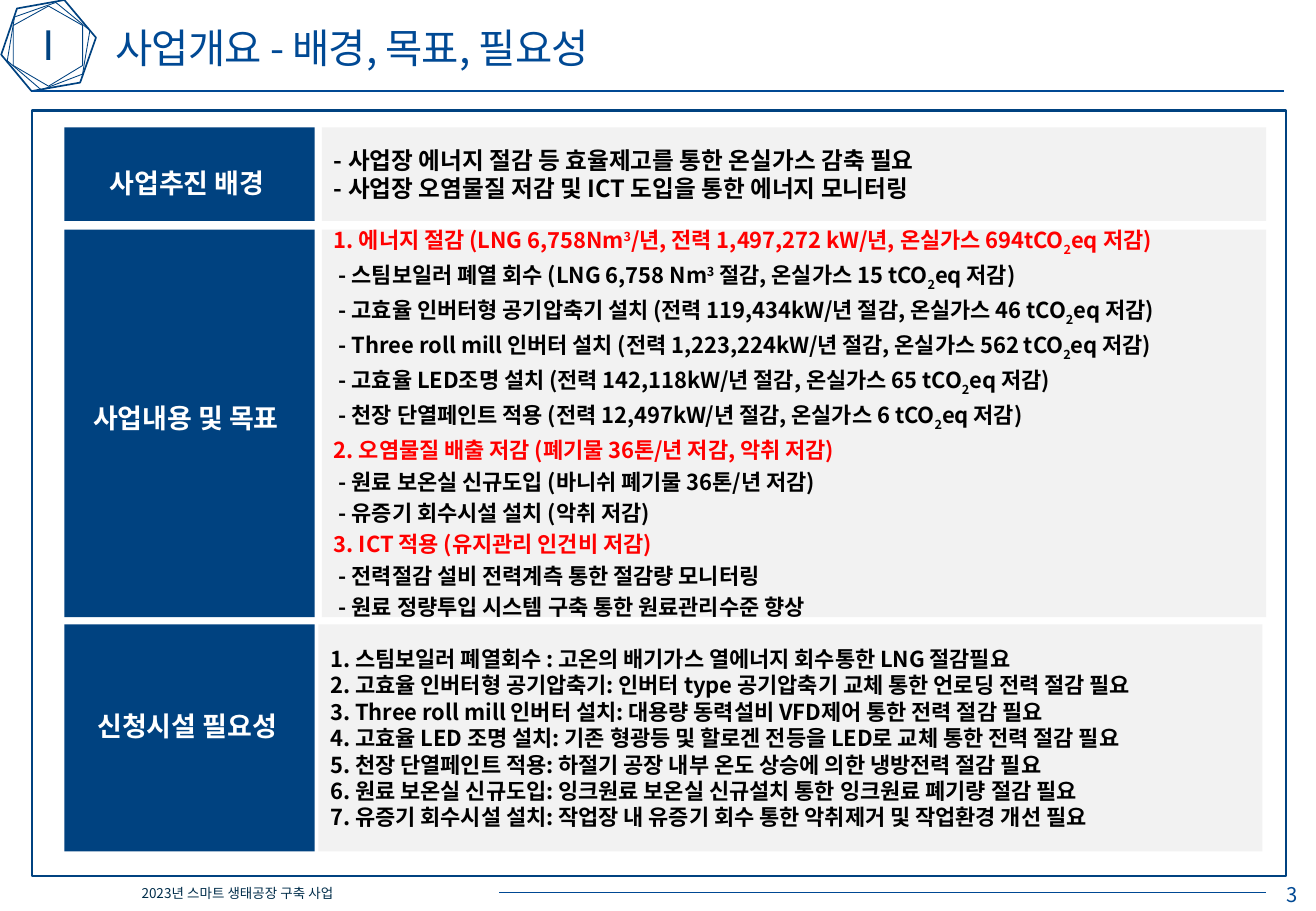
from lxml.etree import SubElement
from pptx import Presentation
from pptx.dml.color import RGBColor
from pptx.enum.shapes import MSO_CONNECTOR, MSO_SHAPE
from pptx.enum.text import MSO_ANCHOR as ANCHOR, PP_ALIGN as ALIGN
from pptx.oxml.ns import qn
from pptx.util import Pt

PX = 9144  # 100 px to the inch
FONT = "Noto Sans CJK KR"
COLORS = {
    "navy": "004280", "blue": "004994", "footer": "002D4A", "white": "FFFFFF",
    "panel": "F2F2F2", "black": "000000", "red": "FF0000",
}
BASELINES = {"^": "30000", "_": "-25000"}

HEXAGONS = [
    (0.5, [(11, 21), (40, 5), (68, 21), (68, 54), (40, 71), (11, 54)]),
    (0.5, [(12, 14), (46, 2), (74, 25), (68, 61), (34, 74), (6, 50)]),
    (1, [(14, 7), (53, 0), (79, 31), (66, 68), (26, 75), (1, 45)]),
]
BACKGROUND = [
    "- 사업장 에너지 절감 등 효율제고를 통한 온실가스 감축 필요",
    "- 사업장 오염물질 저감 및 ICT 도입을 통한 에너지 모니터링",
]
# "|" separates runs; "^" opens a superscript run and "_" a subscript run
GOALS = [
    "1. 에너지 절감 (LNG 6,758Nm|^3|/년, 전력 1,497,272 kW/년, 온실가스 694tCO|_2|eq 저감)",
    "- 스팀보일러 폐열 회수 (LNG 6,758 Nm|^3| 절감, 온실가스 15 tCO|_2|eq 저감)",
    "- 고효율 인버터형 공기압축기 설치 (전력 119,434kW/년 절감, 온실가스 46 tCO|_2|eq 저감)",
    "- Three roll mill 인버터 설치 (전력 1,223,224kW/년 절감, 온실가스 562 tCO|_2|eq 저감)",
    "- 고효율 LED조명 설치 (전력 142,118kW/년 절감, 온실가스 65 tCO|_2|eq 저감)",
    "- 천장 단열페인트 적용 (전력 12,497kW/년 절감, 온실가스 6 tCO|_2|eq 저감)",
    "2. 오염물질 배출 저감 (폐기물 36톤/년 저감, 악취 저감)",
    "- 원료 보온실 신규도입 (바니쉬 폐기물 36톤/년 저감)",
    "- 유증기 회수시설 설치 (악취 저감)",
    "3. ICT 적용 (유지관리 인건비 저감)",
    "- 전력절감 설비 전력계측 통한 절감량 모니터링",
    "- 원료 정량투입 시스템 구축 통한 원료관리수준 향상",
]
NEEDS = [
    "1. 스팀보일러 폐열회수 : 고온의 배기가스 열에너지 회수통한 LNG 절감필요",
    "2. 고효율 인버터형 공기압축기: 인버터 type 공기압축기 교체 통한 언로딩 전력 절감 필요",
    "3. Three roll mill 인버터 설치: 대용량 동력설비 VFD제어 통한 전력 절감 필요",
    "4. 고효율 LED 조명 설치: 기존 형광등 및 할로겐 전등을 LED로 교체 통한 전력 절감 필요",
    "5. 천장 단열페인트 적용: 하절기 공장 내부 온도 상승에 의한 냉방전력 절감 필요",
    "6. 원료 보온실 신규도입: 잉크원료 보온실 신규설치 통한 잉크원료 폐기량 절감 필요",
    "7. 유증기 회수시설 설치: 작업장 내 유증기 회수 통한 악취제거 및 작업환경 개선 필요",
]


def px(*lengths):
    return [length * PX for length in lengths]


def rgb(name):
    return RGBColor.from_string(COLORS[name])


def style(paragraph, size, color, bold=False, align=ALIGN.LEFT, spacing=0):
    """Set the look of a whole paragraph; spacing is in points between letters."""
    paragraph.alignment = align
    font = paragraph.font
    font.size, font.bold, font.name = Pt(size), bold, FONT
    font.color.rgb = rgb(color)
    defaults = paragraph._p.get_or_add_pPr().get_or_add_defRPr()
    SubElement(defaults, qn("a:ea")).set("typeface", FONT)
    if spacing:
        defaults.set("spc", str(int(spacing * 100)))


def add_runs(paragraph, marked_text):
    for piece in marked_text.split("|"):
        baseline = BASELINES.get(piece[0])
        run = paragraph.add_run()
        run.text = piece[1:] if baseline else piece
        if baseline:
            run._r.get_or_add_rPr().set("baseline", baseline)


def add_label(slide, box, text, size, color, anchor=ANCHOR.TOP, **look):
    frame = slide.shapes.add_textbox(*px(*box)).text_frame
    frame.margin_left = frame.margin_right = frame.margin_top = frame.margin_bottom = 0
    frame.word_wrap = True
    frame.vertical_anchor = anchor
    paragraph = frame.paragraphs[0]
    paragraph.text = text
    style(paragraph, size, color, **look)
    return paragraph


def add_block(slide, box, fill, line=None):
    block = slide.shapes.add_shape(MSO_SHAPE.RECTANGLE, *px(*box))
    block.shadow.inherit = False
    block.fill.solid()
    block.fill.fore_color.rgb = rgb(fill)
    if line:
        block.line.color.rgb = rgb(line)
        block.line.width = Pt(1.25)
    else:
        block.line.fill.background()
    return block


def add_rule(slide, left, right, y, width):
    rule = slide.shapes.add_connector(MSO_CONNECTOR.STRAIGHT, *px(left, y, right, y))
    rule.line.color.rgb = rgb("blue")
    rule.line.width = Pt(width)
    SubElement(rule._element.spPr, qn("a:effectLst"))


def add_hexagon(slide, width, corners):
    builder = slide.shapes.build_freeform(*corners[0], scale=PX)
    builder.add_line_segments(corners[1:], close=True)
    hexagon = builder.convert_to_shape()
    hexagon.shadow.inherit = False
    hexagon.fill.background()
    hexagon.line.color.rgb = rgb("navy")
    hexagon.line.width = Pt(width)


def add_section(slide, top, height, heading, heading_box, panel_left, items,
                size, align=ALIGN.JUSTIFY, gap=0, outlined=False):
    """Add a heading block and its panel; outlined items get red heads and indents."""
    add_block(slide, (53, top, 206, height), "navy")
    panel = add_block(slide, (panel_left, top, 777, height), "panel")
    frame = panel.text_frame
    frame.word_wrap = True
    frame.vertical_anchor = ANCHOR.MIDDLE
    for index, item in enumerate(items):
        paragraph = frame.add_paragraph() if index else frame.paragraphs[0]
        add_runs(paragraph, item)
        is_head = outlined and not item.startswith("-")
        if outlined and not is_head:
            paragraph._p.get_or_add_pPr().set("marL", str(4 * PX))
        if index and gap:
            paragraph.space_before = Pt(gap)
        style(paragraph, size, "red" if is_head else "black", True, align)
    add_label(slide, heading_box, heading, 16, "white", bold=True, align=ALIGN.CENTER)


def main():
    deck = Presentation()
    deck.slide_width, deck.slide_height = px(1083, 750)
    slide = deck.slides.add_slide(deck.slide_layouts[6])

    for width, corners in HEXAGONS:
        add_hexagon(slide, width, corners)
    add_rule(slide, 26, 1057, 75, 1)
    add_rule(slide, 411, 1042, 735, 0.5)
    add_label(slide, (62, 729, 267, 13), "2023년 스마트 생태공장 구축 사업", 8, "footer",
              ANCHOR.MIDDLE, align=ALIGN.CENTER)
    add_label(slide, (95, 19, 669, 40), "사업개요 - 배경, 목표, 필요성", 24, "blue",
              spacing=-0.5)
    add_label(slide, (1042, 728, 42, 16), "3", 12, "blue", ANCHOR.MIDDLE,
              align=ALIGN.CENTER)

    add_block(slide, (26, 91, 1032, 630), "white", "navy")
    add_section(slide, 105, 77, "사업추진 배경", (50, 137, 208, 27), 265, BACKGROUND, 14)
    add_section(slide, 189, 319, "사업내용 및 목표", (50, 331, 206, 27), 265, GOALS, 13,
                ALIGN.LEFT, gap=3, outlined=True)
    add_section(slide, 514, 187, "신청시설 필요성", (58, 584, 192, 27), 262, NEEDS, 13)

    numeral = add_label(slide, (12, 21, 56, 36), "Ⅰ", 24, "navy", ANCHOR.MIDDLE,
                        align=ALIGN.CENTER, spacing=-1)
    numeral.line_spacing = 0.9
    deck.save("out.pptx")


if __name__ == "__main__":
    main()
